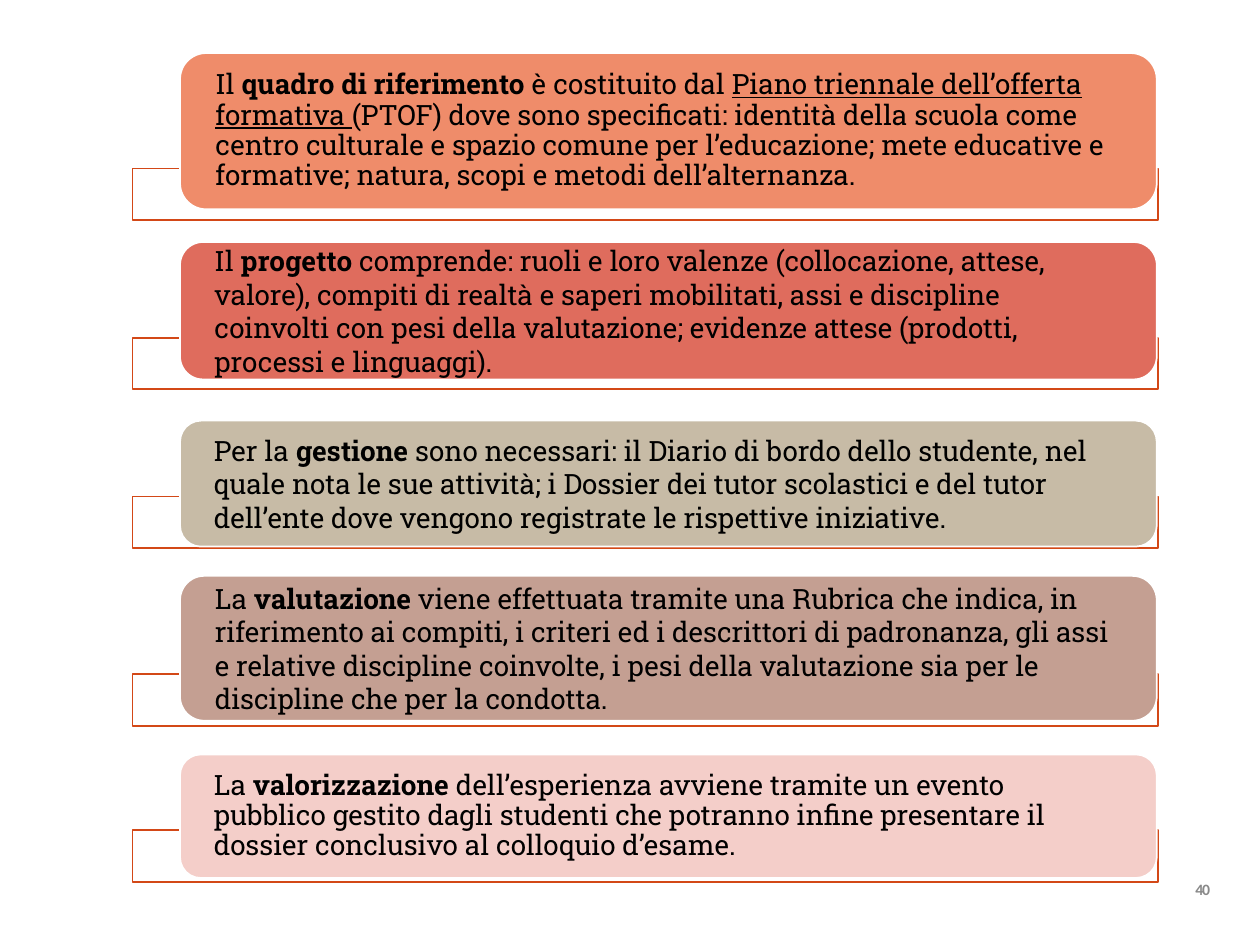
"""Build a slide of five framed cards on the phases of a school project."""
from lxml import etree
from pptx import Presentation
from pptx.dml.color import RGBColor
from pptx.enum.shapes import MSO_SHAPE
from pptx.enum.text import MSO_ANCHOR, PP_ALIGN
from pptx.oxml.ns import qn
from pptx.util import Cm, Pt

RECT = MSO_SHAPE.RECTANGLE
ROUNDED = MSO_SHAPE.ROUNDED_RECTANGLE
MIDDLE = MSO_ANCHOR.MIDDLE
LEFT, CENTER = PP_ALIGN.LEFT, PP_ALIGN.CENTER

COLORS = {
    "white": "FFFFFF", "black": "000000", "grey": "898989", "frame": "D34817",
    "orange": "EF8C6A", "red": "DF6C5D", "sand": "C7BBA6",
    "brown": "C49F92", "pink": "F4CEC9",
}
BOLD = {"bold": True}
UNDERLINE = {"underline": True}

CARDS = [
    (1.07, 3.15, 3.4, "orange", 0.9, [
        ("Il ", {}), ("quadro di riferimento ", BOLD), ("è costituito dal ", {}),
        ("Piano triennale dell’offerta formativa ", UNDERLINE),
        ("(PTOF) dove sono specificati: identità della scuola come centro culturale "
         "e spazio comune per l’educazione; mete educative e formative; natura, "
         "scopi e metodi dell’alternanza.", {})]),
    (4.88, 2.77, 6.81, "red", 1.0, [
        ("Il ", {}), ("progetto ", BOLD),
        ("comprende: ruoli e loro valenze (collocazione, attese, valore), compiti di "
         "realtà e saperi mobilitati, assi e discipline coinvolti con pesi della "
         "valutazione; evidenze attese (prodotti, processi e linguaggi).", {})]),
    (8.48, 2.54, 10.01, "sand", 1.0, [
        ("Per la ", {}), ("gestione", BOLD),
        (" sono necessari: il Diario di bordo dello studente, nel quale nota le sue "
         "attività; i Dossier dei tutor scolastici e del tutor dell’ente dove vengono "
         "registrate le rispettive iniziative.", {})]),
    (11.61, 2.92, 13.59, "brown", 1.0, [
        ("La ", {}), ("valutazione", BOLD),
        (" viene effettuata tramite una Rubrica che indica, in riferimento ai compiti, "
         "i criteri ed i descrittori di padronanza, gli assi e relative discipline "
         "coinvolte, i pesi della valutazione sia per le discipline che per la "
         "condotta.", {})]),
    (15.21, 2.49, 16.74, "pink", 0.9, [
        ("La ", {}), ("valorizzazione", BOLD),
        (" dell’esperienza avviene tramite un evento pubblico gestito dagli studenti "
         "che potranno infine presentare il dossier conclusivo al colloquio "
         "d’esame.", {})]),
]


def rgb(name):
    return RGBColor.from_string(COLORS[name])


def add_run(p, text, font="Roboto Slab", size=16, color="black", bold=False,
            underline=False):
    r = p.add_run()
    r.text = text
    r.font.name, r.font.size = font, Pt(size)
    r.font.bold, r.font.underline = bold, underline
    r.font.color.rgb = rgb(color)
    return r


class Deck:
    def __init__(self, prs):
        self.s = prs.slides.add_slide(prs.slide_layouts[6])

    def shape(self, kind, left, top, width, height, fill, line):
        sp = self.s.shapes.add_shape(kind, Cm(left), Cm(top), Cm(width), Cm(height))
        sp.shadow.inherit = False
        sp.fill.solid()
        sp.fill.fore_color.rgb = rgb(fill)
        sp.line.color.rgb = rgb(line)
        sp.line.width = Pt(1)
        return sp

    def frame(self, top):
        sp = self.shape(RECT, 2.67, top, 20.68, 1.04, "white", "frame")
        color = sp.fill._xPr.find(qn("a:solidFill"))[0]
        etree.SubElement(color, qn("a:alpha")).set("val", "90000")

    def card(self, top, height, fill, spacing, runs):
        sp = self.shape(ROUNDED, 3.63, top, 19.69, height, fill, "white")
        tf = sp.text_frame
        tf.word_wrap = True
        tf.vertical_anchor = MIDDLE
        tf.margin_left = tf.margin_right = Cm(0.56)
        tf.margin_top = tf.margin_bottom = 0
        p = tf.paragraphs[0]
        p.alignment = LEFT
        p.line_spacing = spacing
        for text, style in runs:
            add_run(p, text, **style)

    def page_number(self, text):
        sp = self.s.shapes.add_textbox(Cm(23.57), Cm(17.42), Cm(1.35), Cm(1.02))
        tf = sp.text_frame
        tf.word_wrap = True
        tf.vertical_anchor = MIDDLE
        p = tf.paragraphs[0]
        p.alignment = CENTER
        r = add_run(p, text, font="Calibri", size=9, color="grey", bold=True)
        r.font._element.set("spc", "-70")


def main():
    prs = Presentation()
    prs.slide_width, prs.slide_height = Cm(25.4), Cm(19.05)
    deck = Deck(prs)
    for top, height, frame_top, fill, spacing, runs in CARDS:
        deck.frame(frame_top)
        deck.card(top, height, fill, spacing, runs)
    deck.page_number("40")
    prs.save("out.pptx")


if __name__ == "__main__":
    main()
